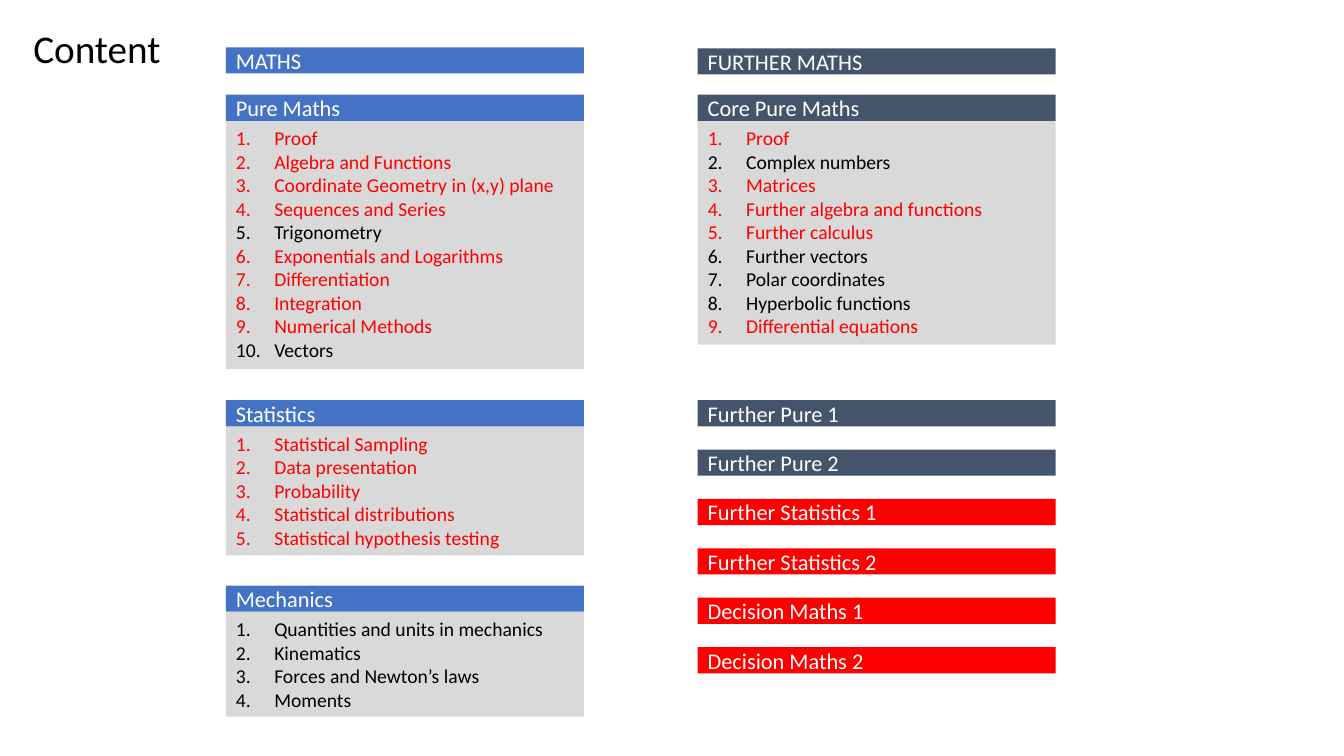
from dataclasses import dataclass

from lxml.etree import SubElement
from pptx import Presentation
from pptx.dml.color import RGBColor
from pptx.enum.shapes import MSO_SHAPE
from pptx.enum.text import MSO_ANCHOR, MSO_AUTO_SIZE, PP_ALIGN
from pptx.oxml.ns import qn
from pptx.util import Emu, Pt

PX = 9144  # EMU per px, 100 px to the inch
MATHS_LEFT, FURTHER_LEFT = 224, 692
COLUMN_WIDTH, BAR_HEIGHT = 355, 26
OPTIONS_TOP, OPTION_STEP = 397, 49
NUMBER_INDENT = 38


@dataclass(frozen=True)
class Theme:
    font: str = "Calibri"
    title_size: int = 28
    bar_size: int = 16
    topic_size: int = 14
    text: str = "000000"
    bar_text: str = "FFFFFF"
    panel: str = "D9D9D9"
    maths: str = "4472C4"
    further: str = "44546A"
    highlight: str = "FF0000"


THEME = Theme()


@dataclass(frozen=True)
class Bar:
    label: str
    left: int
    top: int
    color: str


@dataclass(frozen=True)
class Unit:
    bar: Bar
    topics: tuple[str, ...]
    highlighted: frozenset[int]  # topic numbers shown in the highlight colour


UNITS = (
    Unit(Bar("Pure Maths", MATHS_LEFT, 94, THEME.maths),
         ("Proof", "Algebra and Functions", "Coordinate Geometry in (x,y) plane",
          "Sequences and Series", "Trigonometry", "Exponentials and Logarithms",
          "Differentiation", "Integration", "Numerical Methods", "Vectors"),
         frozenset({1, 2, 3, 4, 6, 7, 8, 9})),
    Unit(Bar("Statistics", MATHS_LEFT, 397, THEME.maths),
         ("Statistical Sampling", "Data presentation", "Probability",
          "Statistical distributions", "Statistical hypothesis testing"),
         frozenset(range(1, 6))),
    Unit(Bar("Mechanics", MATHS_LEFT, 581, THEME.maths),
         ("Quantities and units in mechanics", "Kinematics",
          "Forces and Newton’s laws", "Moments"),
         frozenset()),
    Unit(Bar("Core Pure Maths", FURTHER_LEFT, 94, THEME.further),
         ("Proof", "Complex numbers", "Matrices", "Further algebra and functions",
          "Further calculus", "Further vectors", "Polar coordinates",
          "Hyperbolic functions", "Differential equations"),
         frozenset({1, 3, 4, 5, 9})),
)
OPTIONS = (
    ("Further Pure 1", THEME.further),
    ("Further Pure 2", THEME.further),
    ("Further Statistics 1", THEME.highlight),
    ("Further Statistics 2", THEME.highlight),
    ("Decision Maths 1", THEME.highlight),
    ("Decision Maths 2", THEME.highlight),
)
COURSE_BARS = (
    Bar("MATHS", MATHS_LEFT, 47, THEME.maths),
    Bar("FURTHER MATHS", FURTHER_LEFT, 48, THEME.further),
)


def px(length: int) -> Emu:
    return Emu(length * PX)


def place(shape, left: int, top: int, width: int, height: int) -> None:
    shape.left, shape.top = px(left), px(top)
    shape.width, shape.height = px(width), px(height)


def fill_solid(shape, color: str) -> None:
    shape.fill.solid()
    shape.fill.fore_color.rgb = RGBColor.from_string(color)


def format_paragraph(paragraph, size: int, color: str) -> None:
    paragraph.alignment = PP_ALIGN.LEFT
    paragraph.line_spacing = 1.0
    paragraph.space_before = paragraph.space_after = Pt(0)
    for run in paragraph.runs:
        run.font.name = THEME.font
        run.font.size = Pt(size)
        run.font.bold = False
        run.font.color.rgb = RGBColor.from_string(color)


def number_paragraph(paragraph) -> None:
    properties = paragraph._p.get_or_add_pPr()
    properties.set("marL", str(px(NUMBER_INDENT)))
    properties.set("indent", str(-px(NUMBER_INDENT)))
    SubElement(properties, qn("a:buFont"), typeface=THEME.font)
    SubElement(properties, qn("a:buAutoNum"), type="arabicPeriod")


def draw_title(title) -> None:
    place(title, 23, 19, 1058, 57)
    frame = title.text_frame
    frame.text = "Content"
    frame.vertical_anchor = MSO_ANCHOR.TOP
    frame.auto_size = MSO_AUTO_SIZE.NONE
    format_paragraph(frame.paragraphs[0], THEME.title_size, THEME.text)


def draw_bar(slide, bar: Bar) -> None:
    shape = slide.shapes.add_shape(MSO_SHAPE.RECTANGLE, px(bar.left), px(bar.top),
                                   px(COLUMN_WIDTH), px(BAR_HEIGHT))
    shape.shadow.inherit = False
    fill_solid(shape, bar.color)
    shape.line.fill.background()
    frame = shape.text_frame
    frame.text = bar.label
    frame.word_wrap = True
    frame.vertical_anchor = MSO_ANCHOR.MIDDLE
    format_paragraph(frame.paragraphs[0], THEME.bar_size, THEME.bar_text)


def draw_topics(panel, unit: Unit) -> None:
    height = 10 + 236 * len(unit.topics) // 10
    place(panel, unit.bar.left, unit.bar.top + BAR_HEIGHT, COLUMN_WIDTH, height)
    fill_solid(panel, THEME.panel)
    frame = panel.text_frame
    frame.text = "\n".join(unit.topics)
    frame.word_wrap = True
    frame.vertical_anchor = MSO_ANCHOR.TOP
    frame.auto_size = MSO_AUTO_SIZE.NONE
    for number, paragraph in enumerate(frame.paragraphs, start=1):
        color = THEME.highlight if number in unit.highlighted else THEME.text
        format_paragraph(paragraph, THEME.topic_size, color)
        number_paragraph(paragraph)


def main() -> None:
    presentation = Presentation()
    presentation.slide_width, presentation.slide_height = px(1333), px(750)
    comparison_layout = presentation.slide_layouts[4]  # a title and four bodies
    slide = presentation.slides.add_slide(comparison_layout)

    draw_title(slide.shapes.title)
    panels = list(slide.placeholders)[1:]
    for panel, unit in zip(panels, UNITS):
        draw_topics(panel, unit)
        draw_bar(slide, unit.bar)
    for index, (label, color) in enumerate(OPTIONS):
        top = OPTIONS_TOP + index * OPTION_STEP
        draw_bar(slide, Bar(label, FURTHER_LEFT, top, color))
    for bar in COURSE_BARS:
        draw_bar(slide, bar)

    presentation.save("out.pptx")


if __name__ == "__main__":
    main()
